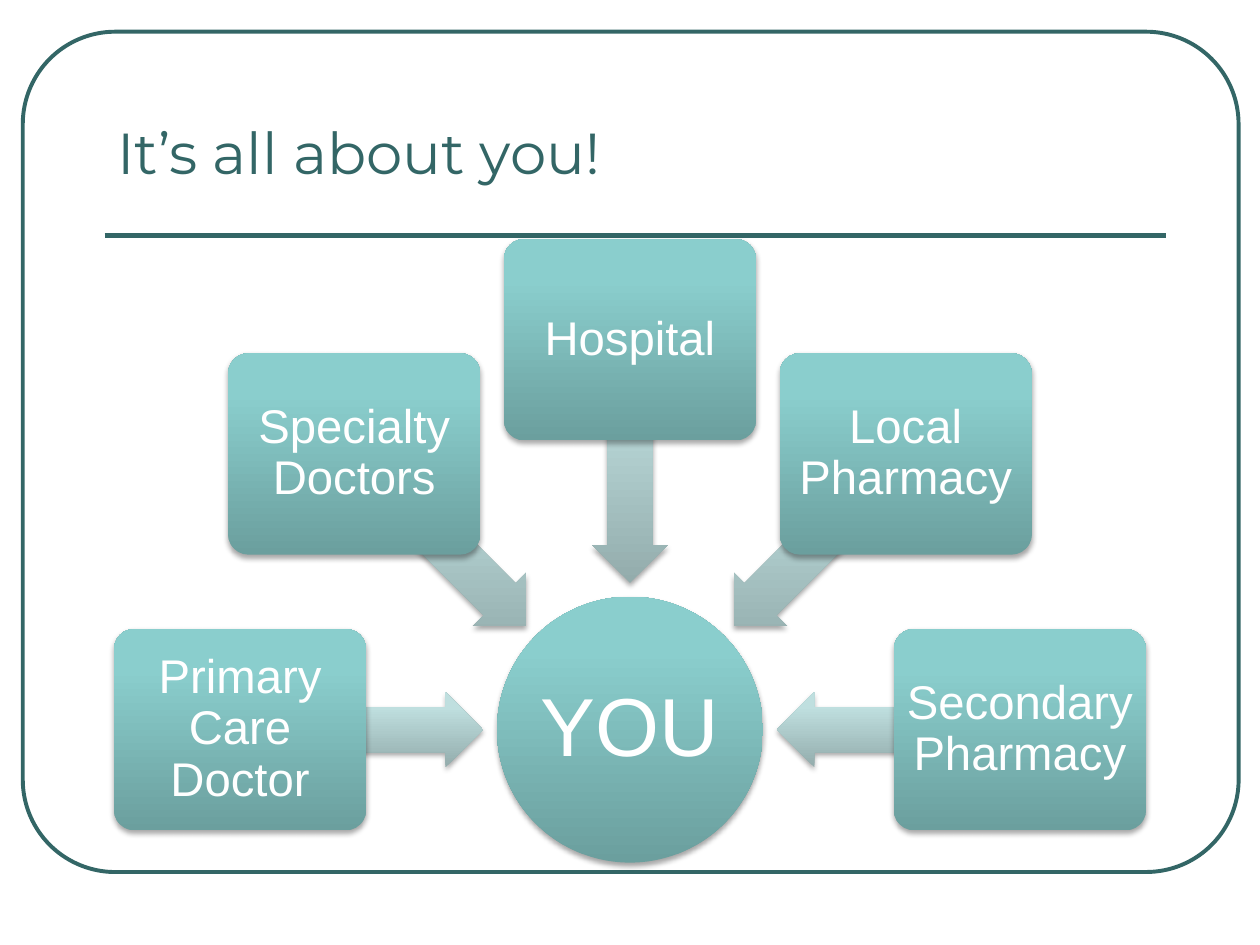
from dataclasses import dataclass
from math import cos, radians, sin

from lxml.etree import SubElement
from pptx import Presentation
from pptx.dml.color import RGBColor
from pptx.enum.shapes import MSO_CONNECTOR, MSO_SHAPE
from pptx.enum.text import MSO_ANCHOR, PP_ALIGN
from pptx.oxml import parse_xml
from pptx.oxml.ns import nsdecls, qn
from pptx.util import Cm, Pt


@dataclass(frozen=True)
class Theme:
    accent: RGBColor = RGBColor(0x33, 0x66, 0x66)
    label: RGBColor = RGBColor(0xFF, 0xFF, 0xFF)
    node_stops: tuple = ((0, "6B9F9E"), (80, "8ACECD"), (100, "8AD1CF"))
    arrow_stops: tuple = ((0, "93ACAC"), (80, "BFDFDF"), (100, "C0E1E0"))
    title_font: str = "Montserrat"
    label_font: str = "Arial"
    title_size: Pt = Pt(33)
    hub_size: Pt = Pt(47)
    box_size: Pt = Pt(27)


theme = Theme()


def add_shaded_shape(slide, kind, center_x, center_y, width, height, stops):
    """Add a centred shape with an upright gradient and a soft shadow below."""
    shape = slide.shapes.add_shape(
        kind, Cm(center_x - width / 2), Cm(center_y - height / 2), Cm(width), Cm(height)
    )
    shape.line.fill.background()
    shape.shadow.inherit = False
    properties = shape.element.spPr
    stop_xml = "".join(
        f'<a:gs pos="{position * 1000}"><a:srgbClr val="{color}"/></a:gs>'
        for position, color in stops
    )
    gradient = parse_xml(
        f'<a:gradFill {nsdecls("a")} rotWithShape="0"><a:gsLst>{stop_xml}</a:gsLst>'
        '<a:lin ang="16200000" scaled="0"/></a:gradFill>'
    )
    properties.find(qn("a:ln")).addprevious(gradient)
    shadow = parse_xml(
        f'<a:outerShdw {nsdecls("a")} blurRad="39400" dist="22900" dir="5400000" '
        'rotWithShape="0"><a:srgbClr val="000000"><a:alpha val="35000"/></a:srgbClr>'
        "</a:outerShdw>"
    )
    properties.find(qn("a:effectLst")).append(shadow)
    return shape


def write_label(shape, text, size):
    frame = shape.text_frame
    frame.text = text
    frame.word_wrap = True
    frame.vertical_anchor = MSO_ANCHOR.MIDDLE
    frame.margin_left = frame.margin_right = Cm(0.03)
    frame.margin_top = frame.margin_bottom = Cm(0.03)
    paragraph = frame.paragraphs[0]
    paragraph.alignment = PP_ALIGN.CENTER
    paragraph.line_spacing = 0.9
    font = paragraph.runs[0].font
    font.name = theme.label_font
    font.size = size
    font.color.rgb = theme.label


presentation = Presentation()
presentation.slide_width = Cm(25.4)
presentation.slide_height = Cm(19.05)
slide = presentation.slides.add_slide(presentation.slide_layouts[5])

# Title
title = slide.shapes.title
title.left, title.top, title.width, title.height = Cm(2.11), Cm(1.47), Cm(21.39), Cm(3.18)
title.text_frame.text = "It’s all about you!"
title.text_frame.vertical_anchor = MSO_ANCHOR.MIDDLE
title_paragraph = title.text_frame.paragraphs[0]
title_paragraph.alignment = PP_ALIGN.LEFT
title_font = title_paragraph.runs[0].font
title_font.name = theme.title_font
title_font.size = theme.title_size
title_font.color.rgb = theme.accent

# Rounded page frame and the rule under the title
page_frame = slide.shapes.add_shape(
    MSO_SHAPE.ROUNDED_RECTANGLE, Cm(0.46), Cm(0.64), Cm(24.51), Cm(16.94)
)
page_frame.adjustments[0] = 0.11
page_frame.fill.background()
page_frame.line.color.rgb = theme.accent
page_frame.line.width = Pt(2.25)
page_frame.shadow.inherit = False

title_rule = slide.shapes.add_connector(
    MSO_CONNECTOR.STRAIGHT, Cm(2.11), Cm(4.75), Cm(23.5), Cm(4.75)
)
title_rule.line.color.rgb = theme.accent
title_rule.line.width = Pt(3)
SubElement(title_rule.element.spPr, qn("a:effectLst"))

# Hub, with boxes around it on a half circle and arrows pointing inwards
hub_x, hub_y, hub_diameter = 12.7, 14.71, 5.36
arrow_radius, box_radius = 5.41, 7.86
hub = add_shaded_shape(
    slide, MSO_SHAPE.OVAL, hub_x, hub_y, hub_diameter, hub_diameter, theme.node_stops
)
write_label(hub, "YOU", theme.hub_size)

providers = [
    "Primary Care Doctor",
    "Specialty Doctors",
    "Hospital",
    "Local Pharmacy",
    "Secondary Pharmacy",
]
for index, provider in enumerate(providers):
    angle = (180 + 45 * index) % 360
    across, down = cos(radians(angle)), sin(radians(angle))

    arrow = add_shaded_shape(
        slide, MSO_SHAPE.LEFT_ARROW,
        hub_x + arrow_radius * across, hub_y + arrow_radius * down,
        4.9, 1.52, theme.arrow_stops,
    )
    arrow.adjustments[0] = 0.6
    arrow.adjustments[1] = 0.5
    arrow.rotation = angle

    box = add_shaded_shape(
        slide, MSO_SHAPE.ROUNDED_RECTANGLE,
        hub_x + box_radius * across, hub_y + box_radius * down,
        5.08, 4.06, theme.node_stops,
    )
    box.adjustments[0] = 0.1
    write_label(box, provider, theme.box_size)

presentation.save("out.pptx")
